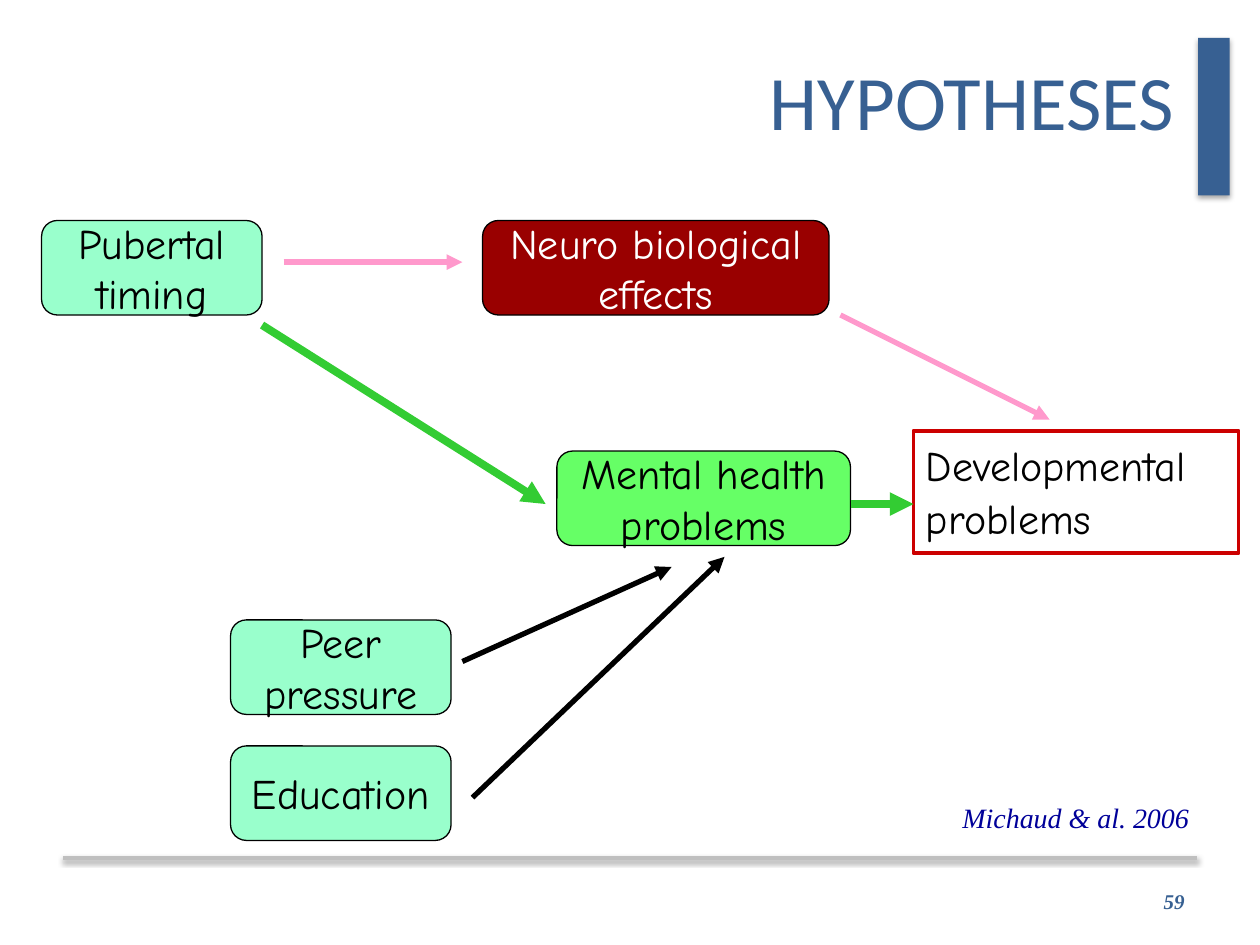
from lxml.etree import SubElement
from pptx import Presentation
from pptx.dml.color import RGBColor
from pptx.enum.shapes import MSO_CONNECTOR, MSO_SHAPE
from pptx.enum.text import MSO_ANCHOR, PP_ALIGN
from pptx.oxml.ns import qn
from pptx.util import Inches, Pt

BLACK = RGBColor(0x00, 0x00, 0x00)
WHITE = RGBColor(0xFF, 0xFF, 0xFF)
BLUE = RGBColor(0x37, 0x60, 0x92)
NAVY = RGBColor(0x00, 0x00, 0x99)
GRAY = RGBColor(0xBF, 0xBF, 0xBF)
MINT = RGBColor(0x99, 0xFF, 0xCC)
LIME = RGBColor(0x66, 0xFF, 0x66)
GREEN = RGBColor(0x33, 0xCC, 0x33)
PINK = RGBColor(0xFF, 0x99, 0xCC)
MAROON = RGBColor(0x99, 0x00, 0x00)
RED = RGBColor(0xCC, 0x00, 0x00)

BODY_FONT = "Comic Neue"
SERIF_FONT = "Times New Roman"

# text, left, top, width, fill, text colour
FACTORS = [
    ("Education", 1.83, 5.92, 1.75, MINT, BLACK),
    ("Pubertal\ntiming", 0.33, 1.75, 1.75, MINT, BLACK),
    ("Peer\npressure", 1.83, 4.92, 1.75, MINT, BLACK),
    ("Neuro biological\neffects", 3.83, 1.75, 2.75, MAROON, WHITE),
    ("Mental health\nproblems", 4.42, 3.58, 2.33, LIME, BLACK),
]

# start, end, colour, width
ARROWS = [
    ((2.25, 2.08), (3.67, 2.08), PINK, 3),
    ((6.67, 2.5), (8.33, 3.33), PINK, 3),
    ((2.08, 2.58), (4.33, 4), GREEN, 4.5),
    ((3.67, 5.25), (5.33, 4.5), BLACK, 3),
    ((3.75, 6.33), (5.75, 4.42), BLACK, 3),
    ((6.75, 4), (7.25, 4), GREEN, 4.5),
]


def format_text(tf, font, size, color, align=PP_ALIGN.LEFT, bold=False, italic=False):
    for p in tf.paragraphs:
        p.alignment = align
        for r in p.runs:
            r.font.name = font
            r.font.size = Pt(size)
            r.font.color.rgb = color
            r.font.bold = bold
            r.font.italic = italic


def add_effects(sp, shadow=None):
    """Give the shape an effect list: empty, or a downward shadow (alpha %, distance pt)."""
    effects = SubElement(sp._element.spPr, qn("a:effectLst"))
    if shadow:
        alpha, distance = shadow
        outer = SubElement(effects, qn("a:outerShdw"), blurRad=str(Pt(3.1)),
                           dist=str(Pt(distance)), dir="5400000", rotWithShape="0")
        color = SubElement(outer, qn("a:srgbClr"), val="000000")
        SubElement(color, qn("a:alpha"), val=str(alpha * 1000))


def add_line(s, start, end, color, width, arrow=False, shadow=None):
    line = s.shapes.add_connector(MSO_CONNECTOR.STRAIGHT,
                                  *(Inches(v) for v in (*start, *end)))
    line.line.color.rgb = color
    line.line.width = Pt(width)
    if arrow:
        SubElement(line.line._get_or_add_ln(), qn("a:tailEnd"), type="triangle")
    add_effects(line, shadow)


def add_frame(s, left, top):
    add_bar = s.shapes.add_shape(MSO_SHAPE.RECTANGLE, Inches(left), Inches(top),
                                 Inches(0.25), Inches(1.25))
    add_bar.fill.solid()
    add_bar.fill.fore_color.rgb = BLUE
    add_bar.line.fill.background()
    add_effects(add_bar, (35, 1.8))
    add_line(s, (0.5, 6.81), (9.5, 6.81), GRAY, 2, shadow=(38, 1.6))


def add_title(s, text):
    title = s.shapes.title
    title.left, title.top = Inches(0.92), Inches(0.17)
    title.width, title.height = Inches(8.5), Inches(1.25)
    tf = title.text_frame
    tf.text = text
    tf.vertical_anchor = MSO_ANCHOR.MIDDLE
    format_text(tf, "Calibri", 44, BLUE, PP_ALIGN.RIGHT)


def add_factor(s, text, left, top, width, fill, color):
    sp = s.shapes.add_shape(MSO_SHAPE.ROUNDED_RECTANGLE, Inches(left), Inches(top),
                            Inches(width), Inches(0.75))
    sp.shadow.inherit = False
    sp.fill.solid()
    sp.fill.fore_color.rgb = fill
    sp.line.color.rgb = BLACK
    sp.line.width = Pt(0.75)
    tf = sp.text_frame
    tf.text = text
    tf.word_wrap = False
    tf.vertical_anchor = MSO_ANCHOR.MIDDLE
    format_text(tf, BODY_FONT, 24, color, PP_ALIGN.CENTER)


def add_outcome(s, text):
    sp = s.shapes.add_shape(MSO_SHAPE.RECTANGLE, Inches(7.25), Inches(3.42),
                            Inches(2.58), Inches(0.97))
    sp.shadow.inherit = False
    sp.fill.background()
    sp.line.color.rgb = RED
    sp.line.width = Pt(2.25)
    tf = sp.text_frame
    tf.text = text
    tf.word_wrap = True
    tf.vertical_anchor = MSO_ANCHOR.TOP
    tf.paragraphs[0].line_spacing = 1.05
    format_text(tf, BODY_FONT, 24, BLACK)


def add_note(s, text, left, top, width, height, size, color, wrap=False, **style):
    tf = s.shapes.add_textbox(Inches(left), Inches(top),
                              Inches(width), Inches(height)).text_frame
    tf.text = text
    tf.word_wrap = wrap
    tf.vertical_anchor = MSO_ANCHOR.MIDDLE
    format_text(tf, SERIF_FONT, size, color, italic=True, **style)


def main():
    prs = Presentation()
    prs.slide_width, prs.slide_height = Inches(10), Inches(7.5)
    s = prs.slides.add_slide(prs.slide_layouts[5])
    add_frame(s, 9.51, 0.3)
    add_title(s, "HYPOTHESES")
    add_note(s, "59", 7.17, 6.95, 2.33, 0.4, 12, BLUE, wrap=True,
             align=PP_ALIGN.RIGHT, bold=True)
    for factor in FACTORS:
        add_factor(s, *factor)
    add_outcome(s, "Developmental\vproblems")
    for arrow in ARROWS:
        add_line(s, *arrow, arrow=True)
    add_note(s, "Michaud & al. 2006", 7.54, 6.3, 2.01, 0.37, 16, NAVY)
    prs.save("out.pptx")


if __name__ == "__main__":
    main()
